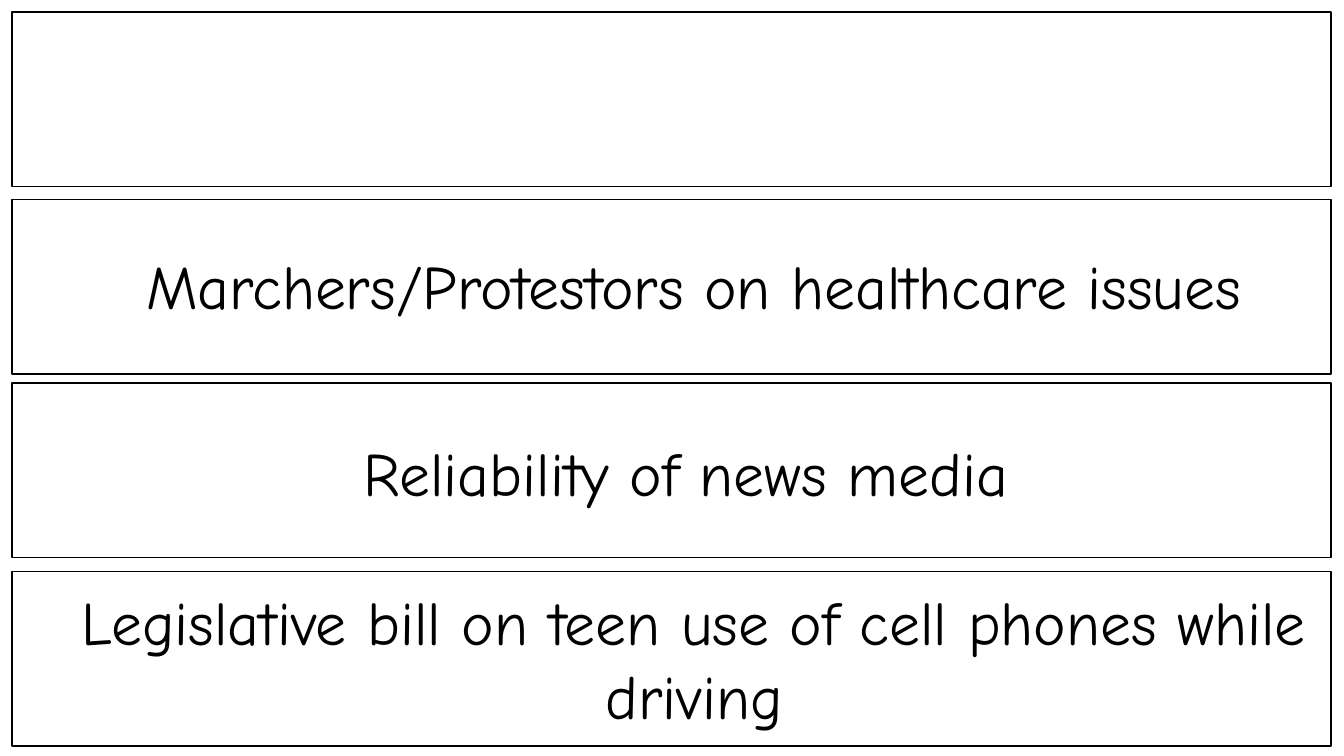
from pptx import Presentation
from pptx import util as u
from pptx.dml.color import RGBColor
from pptx.enum import shapes, text

# Topic, card top, then the caption's left, top, width and height (inches)
CARDS = [
    ("", 0.12, None),
    ("Marchers/Protestors on healthcare issues", 1.98, (0.3, 2.41, 13.17, 0.84)),
    ("Reliability of news media", 3.8, (0.41, 4.27, 12.79, 0.84)),
    ("Legislative bill on teen use of cell phones while driving", 5.67,
     (0.49, 5.74, 12.79, 1.58)),
]
SLIDE_WIDTH, SLIDE_HEIGHT = 13.33, 7.5
CARD_LEFT, CARD_WIDTH, CARD_HEIGHT = 0.12, 13.08, 1.73
THEME = {
    "paper": RGBColor(0xFF, 0xFF, 0xFF),
    "ink": RGBColor(0, 0, 0),
    "border": u.Pt(1),
    "font": {"name": "Comic Neue", "size": u.Pt(44)},
}


def add_card(slide, top):
    box = (CARD_LEFT, top, CARD_WIDTH, CARD_HEIGHT)
    card = slide.shapes.add_shape(shapes.MSO_SHAPE.RECTANGLE, *map(u.Inches, box))
    card.shadow.inherit = False
    card.fill.solid()
    card.fill.fore_color.rgb = THEME["paper"]
    card.line.color.rgb = THEME["ink"]
    card.line.width = THEME["border"]


def add_caption(slide, topic, box):
    frame = slide.shapes.add_textbox(*map(u.Inches, box)).text_frame
    frame.word_wrap = True
    frame.auto_size = text.MSO_AUTO_SIZE.SHAPE_TO_FIT_TEXT
    paragraph = frame.paragraphs[0]
    paragraph.alignment = text.PP_ALIGN.CENTER
    caption = paragraph.add_run()
    caption.text = topic
    for attribute, value in THEME["font"].items():
        setattr(caption.font, attribute, value)
    caption.font.color.rgb = THEME["ink"]


def main():
    deck = Presentation()
    deck.slide_width = u.Inches(SLIDE_WIDTH)
    deck.slide_height = u.Inches(SLIDE_HEIGHT)
    slide = deck.slides.add_slide(deck.slide_layouts[6])
    bottom_up = CARDS[::-1]
    for _, top, _ in bottom_up:
        add_card(slide, top)
    for topic, _, box in bottom_up:
        if topic:
            add_caption(slide, topic, box)
    deck.save("out.pptx")


if __name__ == "__main__":
    main()
